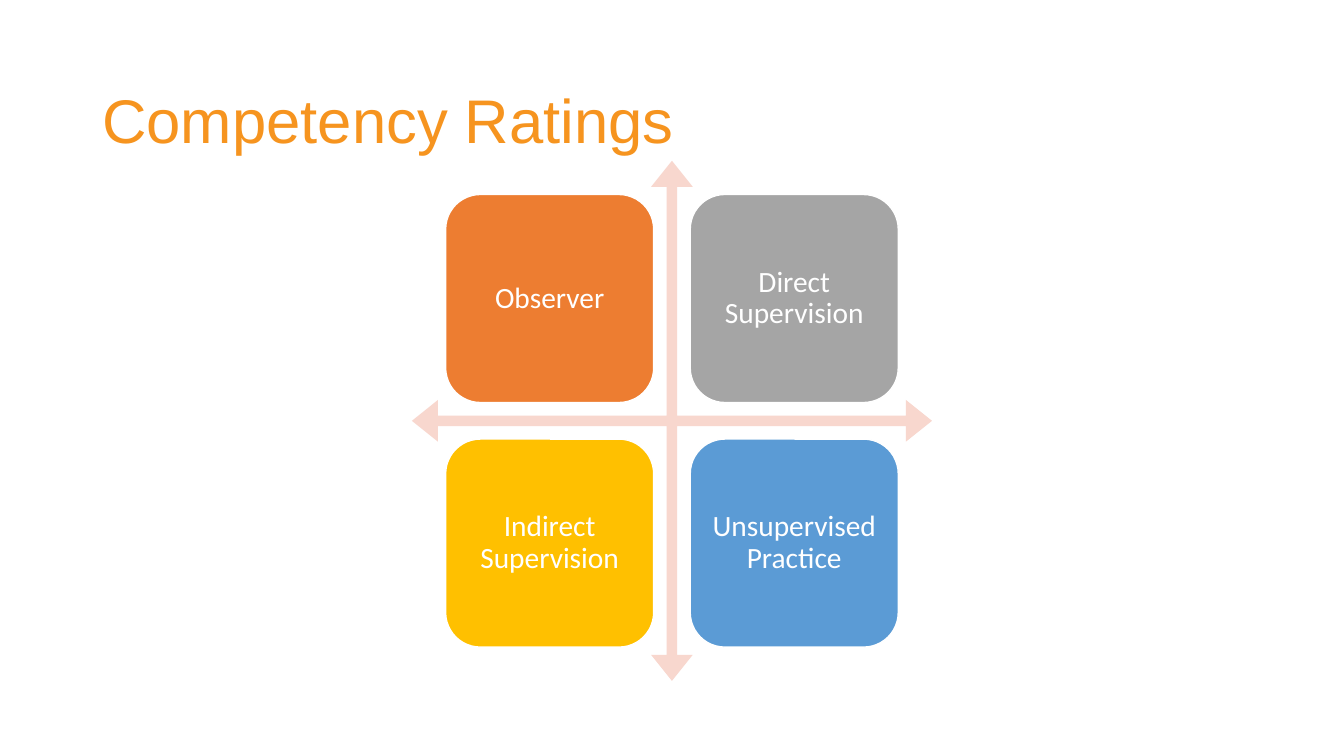
import pptx
import pptx.util
import pptx.dml.color
import pptx.enum.shapes
import pptx.enum.text

Pt = pptx.util.Pt
RGBColor = pptx.dml.color.RGBColor
SHAPE = pptx.enum.shapes.MSO_SHAPE
ALIGN = pptx.enum.text.PP_ALIGN
MIDDLE = pptx.enum.text.MSO_ANCHOR.MIDDLE

WHITE = RGBColor(0xFF, 0xFF, 0xFF)
TITLE = RGBColor(0xF6, 0x94, 0x1F)
PINK = RGBColor(0xF8, 0xD7, 0xCE)
ORANGE = RGBColor(0xED, 0x7D, 0x31)
GREY = RGBColor(0xA5, 0xA5, 0xA5)
GOLD = RGBColor(0xFF, 0xC0, 0x00)
BLUE = RGBColor(0x5B, 0x9B, 0xD5)

# Matrix geometry in points
MID_X, MID_Y = 480, 300.6
CROSS = 371.5
TILE = 148.6
PITCH = 174.7

RATINGS = [
    [("Observer", ORANGE), ("Direct Supervision", GREY)],
    [("Indirect Supervision", GOLD), ("Unsupervised Practice", BLUE)],
]


def write(shape, text, font, size, color, align):
    frame = shape.text_frame
    frame.word_wrap = True
    frame.vertical_anchor = MIDDLE
    para = frame.paragraphs[0]
    para.alignment = align
    para.line_spacing = 0.9
    run = para.add_run()
    run.text = text
    run.font.name = font
    run.font.size = Pt(size)
    run.font.color.rgb = color


def add_square(slide, kind, x, y, side, fill):
    """Add a filled square shape centred on x, y."""
    shape = slide.shapes.add_shape(
        kind, Pt(x - side / 2), Pt(y - side / 2), Pt(side), Pt(side))
    shape.shadow.inherit = False
    shape.fill.solid()
    shape.fill.fore_color.rgb = fill
    shape.line.fill.background()
    return shape


def add_title(slide, text):
    box = slide.shapes.add_textbox(Pt(66), Pt(36), Pt(828), Pt(104.4))
    write(box, text, "Arial", 44, TITLE, ALIGN.LEFT)


def add_cross(slide):
    cross = add_square(slide, SHAPE.QUAD_ARROW, MID_X, MID_Y, CROSS, PINK)
    for i, value in enumerate((0.02, 0.04, 0.05)):
        cross.adjustments[i] = value


def add_tile(slide, row, col, text, fill):
    x = MID_X + (col - 0.5) * PITCH
    y = MID_Y + (row - 0.5) * PITCH
    tile = add_square(slide, SHAPE.ROUNDED_RECTANGLE, x, y, TILE, fill)
    tile.line.color.rgb = WHITE
    tile.line.width = Pt(1)
    frame = tile.text_frame
    frame.margin_left = frame.margin_right = Pt(6.5)
    frame.margin_top = frame.margin_bottom = Pt(6.5)
    write(tile, text, "Calibri", 21, WHITE, ALIGN.CENTER)


def main():
    deck = pptx.Presentation()
    deck.slide_width, deck.slide_height = Pt(960), Pt(540)
    slide = deck.slides.add_slide(deck.slide_layouts[6])

    # Heading
    add_title(slide, "Competency Ratings")

    # Four-way arrow with one tile in each quadrant
    add_cross(slide)
    for row, tiles in enumerate(RATINGS):
        for col, (text, fill) in enumerate(tiles):
            add_tile(slide, row, col, text, fill)

    deck.save("out.pptx")


if __name__ == "__main__":
    main()
